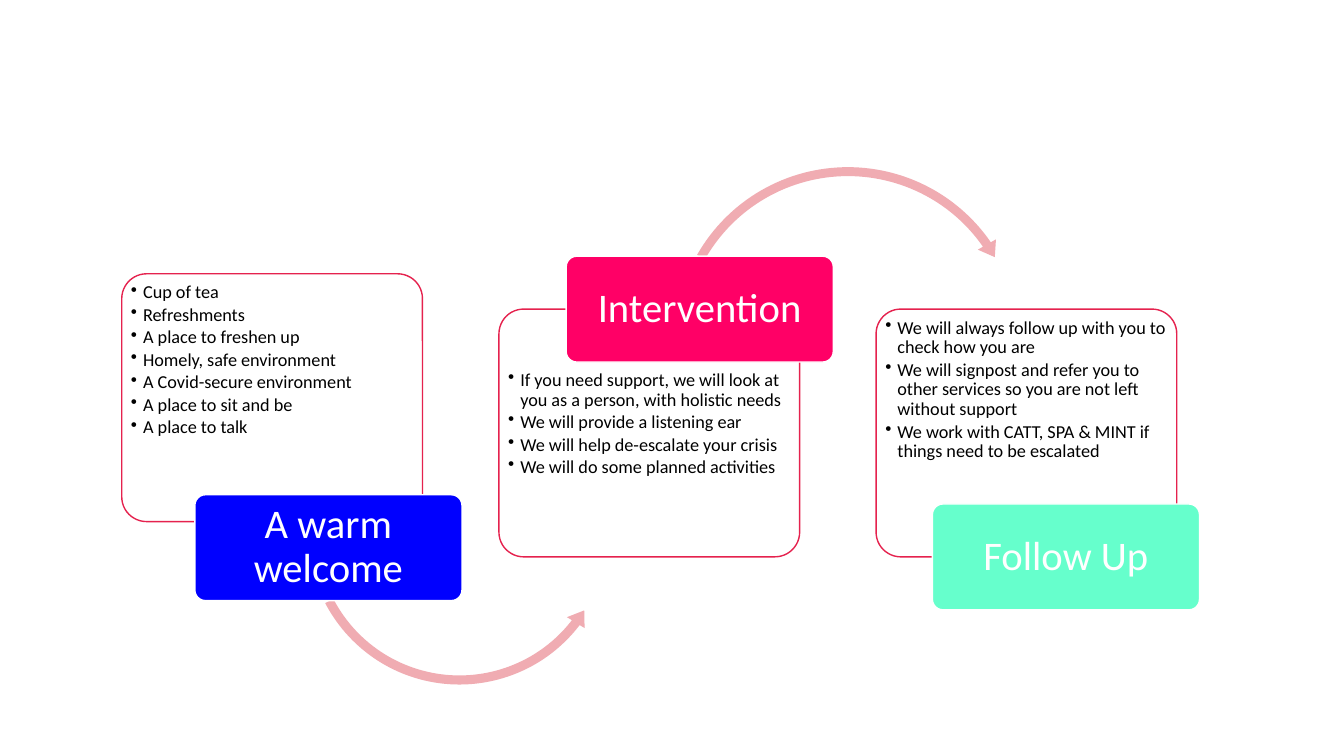
from lxml.etree import SubElement
from pptx import Presentation
from pptx.dml.color import RGBColor
from pptx.enum.shapes import MSO_SHAPE
from pptx.enum.text import MSO_ANCHOR, PP_ALIGN
from pptx.oxml.ns import qn
from pptx.util import Inches, Pt

WHITE = RGBColor(0xFF, 0xFF, 0xFF)
BLACK = RGBColor(0x00, 0x00, 0x00)
RED = RGBColor(0xE5, 0x22, 0x4E)
ROSE = RGBColor(0xF0, 0xAC, 0xB2)
BLUE = RGBColor(0x00, 0x00, 0xFF)
PINK = RGBColor(0xFF, 0x00, 0x66)
MINT = RGBColor(0x66, 0xFF, 0xCC)

COLS, ROWS = 16, 9
LEFT, PITCH = 1.45, 4.49  # first frame and step, in columns
FRAME = (3.58, 2.95)
LABEL = (3.18, 1.26)

# Frame top, top inset in inches, label offset and top, label colour, title, points
STEPS = [
    (3.26, 0.02, 0.87, 5.89, BLUE, "A warm welcome", [
        "Cup of tea",
        "Refreshments",
        "A place to freshen up",
        "Homely, safe environment",
        "A Covid-secure environment",
        "A place to sit and be",
        "A place to talk",
    ]),
    (3.68, 0.54, 0.80, 3.05, PINK, "Intervention", [
        "If you need support, we will look at you as a person, with holistic needs",
        "We will provide a listening ear",
        "We will help de-escalate your crisis",
        "We will do some planned activities",
    ]),
    (3.68, 0.02, 0.67, 6.00, MINT, "Follow Up", [
        "We will always follow up with you to check how you are",
        "We will signpost and refer you to other services so you are not left "
        "without support",
        "We work with CATT, SPA & MINT if things need to be escalated",
    ]),
]

# Shape, left, top, size, adjustments; each arrow leaves the step of its index
ARROWS = [
    (MSO_SHAPE.LEFT_CIRCULAR_ARROW, 3.60, 4.48, 3.74,
     (0.029, 3.487, 22.508, 91.511, 0.033)),
    (MSO_SHAPE.CIRCULAR_ARROW, 7.96, 1.92, 4.27,
     (0.025, 3.03, 195.215, 125.755, 0.029)),
]


class Board:
    font = "Calibri"

    def __init__(self, deck):
        self.slide = deck.slides.add_slide(deck.slide_layouts[6])
        self.col = deck.slide_width / COLS
        self.row = deck.slide_height / ROWS

    def shape(self, kind, x, y, size, fill, line=None):
        wide, high = size
        item = self.slide.shapes.add_shape(
            kind, round(x * self.col), round(y * self.row),
            round(wide * self.col), round(high * self.row))
        item.shadow.inherit = False
        item.fill.solid()
        item.fill.fore_color.rgb = fill
        if line is None:
            item.line.fill.background()
        else:
            item.line.color.rgb = line
            item.line.width = Pt(1)
        return item

    def card(self, x, y, size, fill, line):
        item = self.shape(MSO_SHAPE.ROUNDED_RECTANGLE, x, y, size, fill, line)
        item.adjustments[0] = 0.1
        return item

    def words(self, item, lines, size, color, align, anchor, side, top, foot):
        """Fill a shape with paragraphs; insets are in inches."""
        frame = item.text_frame
        frame.word_wrap = True
        frame.vertical_anchor = anchor
        frame.margin_left = frame.margin_right = Inches(side)
        frame.margin_top, frame.margin_bottom = Inches(top), Inches(foot)
        frame.text = "\n".join(lines)
        for para in frame.paragraphs:
            para.alignment = align
            para.line_spacing = 0.9
            for run in para.runs:
                run.font.name = self.font
                run.font.size = Pt(size)
                run.font.color.rgb = color

    def points(self, x, y, top, lines):
        item = self.card(x, y, FRAME, WHITE, RED)
        tint = item._element.spPr.find(qn("a:solidFill"))[0]
        SubElement(tint, qn("a:alpha"), val="90000")
        self.words(item, lines, 13, BLACK, PP_ALIGN.LEFT, MSO_ANCHOR.TOP,
                   0.02, top, 0.02)
        for para in item.text_frame.paragraphs:
            props = para._p.get_or_add_pPr()
            props.set("marL", str(Inches(0.12)))
            props.set("indent", str(-Inches(0.12)))
            SubElement(props, qn("a:buChar"), char="•")
            para.level = 1
            para.space_after = Pt(2)

    def label(self, x, y, fill, title):
        item = self.card(x, y, LABEL, fill, WHITE)
        self.words(item, [title], 29, WHITE, PP_ALIGN.CENTER,
                   MSO_ANCHOR.MIDDLE, 0.06, 0.04, 0.04)

    def arrow(self, kind, x, y, size, bends):
        span = (size, size * self.col / self.row)
        item = self.shape(kind, x, y, span, ROSE)
        for spot, bend in enumerate(bends):
            item.adjustments[spot] = bend


def main():
    deck = Presentation()
    deck.slide_width, deck.slide_height = Inches(13.33), Inches(7.5)
    board = Board(deck)
    for spot, (y, top, shift, low, fill, title, lines) in enumerate(STEPS):
        x = LEFT + spot * PITCH
        board.points(x, y, top, lines)
        for arrow in ARROWS[spot:spot + 1]:
            board.arrow(*arrow)
        board.label(x + shift, low, fill, title)
    deck.save("out.pptx")


if __name__ == "__main__":
    main()
